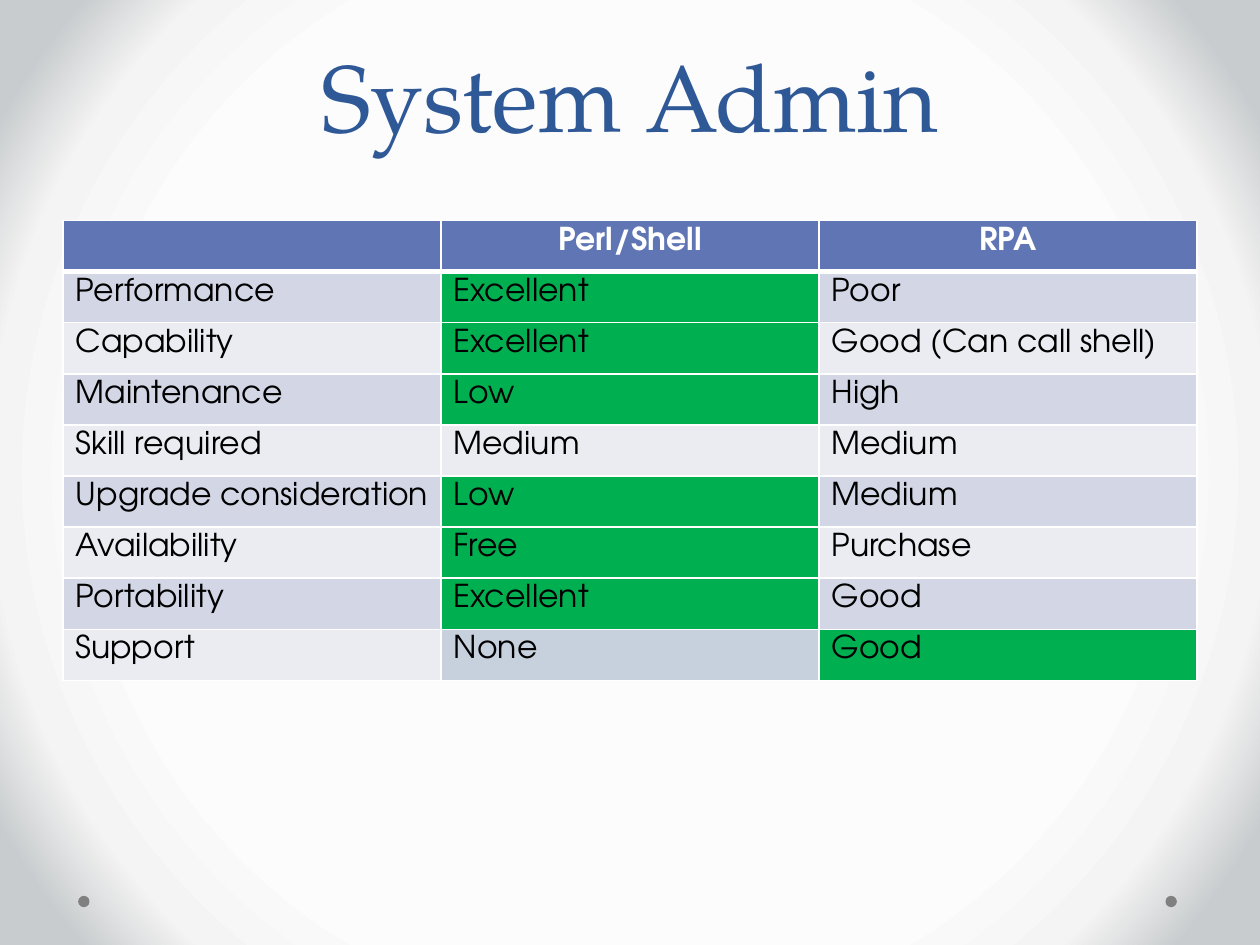
from dataclasses import dataclass

import lxml.etree
import pptx
import pptx.dml.color
import pptx.enum.shapes
import pptx.enum.text
import pptx.oxml
import pptx.oxml.ns
import pptx.util
from pptx.util import Inches


@dataclass(frozen=True)
class Theme:
    title_font: str = "TeX Gyre Pagella"
    body_font: str = "TeX Gyre Adventor"
    title_size: int = 54
    title_leading: int = 58
    body_size: int = 18
    title: str = "2F5897"
    text: str = "000000"
    white: str = "FFFFFF"
    dot: str = "808080"
    header: str = "6076B4"
    bands: tuple = ("D2D6E5", "EAECF2")
    best: str = "00B050"
    neutral: str = "C7D1DE"
    backdrop: tuple = ((66, "FCFCFC"), (81, "F4F4F4"), (92, "C8CCCE"))


THEME = Theme()
HEADINGS = ("", "Perl/Shell", "RPA")
COMPARISON = (
    ("Performance", "Excellent", "Poor"),
    ("Capability", "Excellent", "Good (Can call shell)"),
    ("Maintenance", "Low", "High"),
    ("Skill required", "Medium", "Medium"),
    ("Upgrade consideration", "Low", "Medium"),
    ("Availability", "Free", "Purchase"),
    ("Portability", "Excellent", "Good"),
    ("Support", "None", "Good"),
)
# Cells, by table row and column, that stand out from the row bands
HIGHLIGHTS = {(row, 1): THEME.best for row in (1, 2, 3, 5, 6, 7)}
HIGHLIGHTS.update({(8, 1): THEME.neutral, (8, 2): THEME.best})


def rgb(value):
    return pptx.dml.color.RGBColor.from_string(value)


def style_font(font, name, size, color, bold=False):
    font.name = name
    font.size = pptx.util.Pt(size)
    font.color.rgb = rgb(color)
    font.bold = bold


def paint_background(slide):
    """Fill the background with a gradient that darkens towards the corners."""
    fill = slide.background.fill
    fill.gradient()
    gradient = slide.background._cSld.find(".//" + pptx.oxml.ns.qn("a:gradFill"))
    stops = "".join(
        f'<a:gs pos="{position * 1000}"><a:srgbClr val="{color}"/></a:gs>'
        for position, color in THEME.backdrop
    )
    radial = pptx.oxml.parse_xml(
        f'<a:gradFill {pptx.oxml.ns.nsdecls("a")} rotWithShape="1">'
        f"<a:gsLst>{stops}</a:gsLst>"
        '<a:path path="circle"><a:fillToRect l="50000" t="50000" r="50000" b="50000"/></a:path>'
        "</a:gradFill>"
    )
    gradient.getparent().replace(gradient, radial)


def add_corner_dots(slide, left, top, width, size):
    """Put one dot at each end of a strip."""
    for dot_left in (left, left + width - size):
        dot = slide.shapes.add_shape(
            pptx.enum.shapes.MSO_SHAPE.OVAL, dot_left, top, size, size
        )
        dot.shadow.inherit = False
        dot.fill.solid()
        dot.fill.fore_color.rgb = rgb(THEME.dot)
        dot.line.fill.background()


def add_title(slide, text, left, top, width, height):
    frame = slide.shapes.add_textbox(left, top, width, height).text_frame
    frame.word_wrap = True
    frame.vertical_anchor = pptx.enum.text.MSO_ANCHOR.BOTTOM
    paragraph = frame.paragraphs[0]
    paragraph.text = text
    paragraph.alignment = pptx.enum.text.PP_ALIGN.CENTER
    paragraph.line_spacing = pptx.util.Pt(THEME.title_leading)
    style_font(paragraph.font, THEME.title_font, THEME.title_size, THEME.title)


def set_borders(cell, top, bottom):
    """Draw white borders; top and bottom are widths in points."""
    properties = cell._tc.get_or_add_tcPr()
    for side, width in (("L", 1), ("R", 1), ("T", top), ("B", bottom)):
        line = lxml.etree.SubElement(
            properties, pptx.oxml.ns.qn(f"a:ln{side}"), w=str(pptx.util.Pt(width))
        )
        fill = lxml.etree.SubElement(line, pptx.oxml.ns.qn("a:solidFill"))
        lxml.etree.SubElement(fill, pptx.oxml.ns.qn("a:srgbClr"), val=THEME.white)


def add_comparison_table(slide, left, top, width, height):
    rows = (HEADINGS, *COMPARISON)
    table = slide.shapes.add_table(
        len(rows), len(HEADINGS), left, top, width, height
    ).table
    for row, texts in enumerate(rows):
        is_header = row == 0
        row_fill = THEME.header if is_header else THEME.bands[(row - 1) % 2]
        for column, text in enumerate(texts):
            cell = table.cell(row, column)
            set_borders(cell, top=3 if row == 1 else 1, bottom=3 if is_header else 1)
            cell.fill.solid()
            cell.fill.fore_color.rgb = rgb(HIGHLIGHTS.get((row, column), row_fill))
            paragraph = cell.text_frame.paragraphs[0]
            paragraph.text = text
            if is_header:
                paragraph.alignment = pptx.enum.text.PP_ALIGN.CENTER
            color = THEME.white if is_header else THEME.text
            style_font(
                paragraph.font, THEME.body_font, THEME.body_size, color, bold=is_header
            )


def main():
    presentation = pptx.Presentation()
    presentation.slide_width = Inches(10)
    presentation.slide_height = Inches(7.5)
    slide = presentation.slides.add_slide(presentation.slide_layouts[6])
    paint_background(slide)
    add_corner_dots(slide, Inches(0.62), Inches(7.11), Inches(8.72), Inches(0.09))
    add_title(slide, "System Admin", Inches(0.5), Inches(0), Inches(9), Inches(1.25))
    add_comparison_table(slide, Inches(0.5), Inches(1.75), Inches(9), Inches(3.65))
    presentation.save("out.pptx")


if __name__ == "__main__":
    main()
